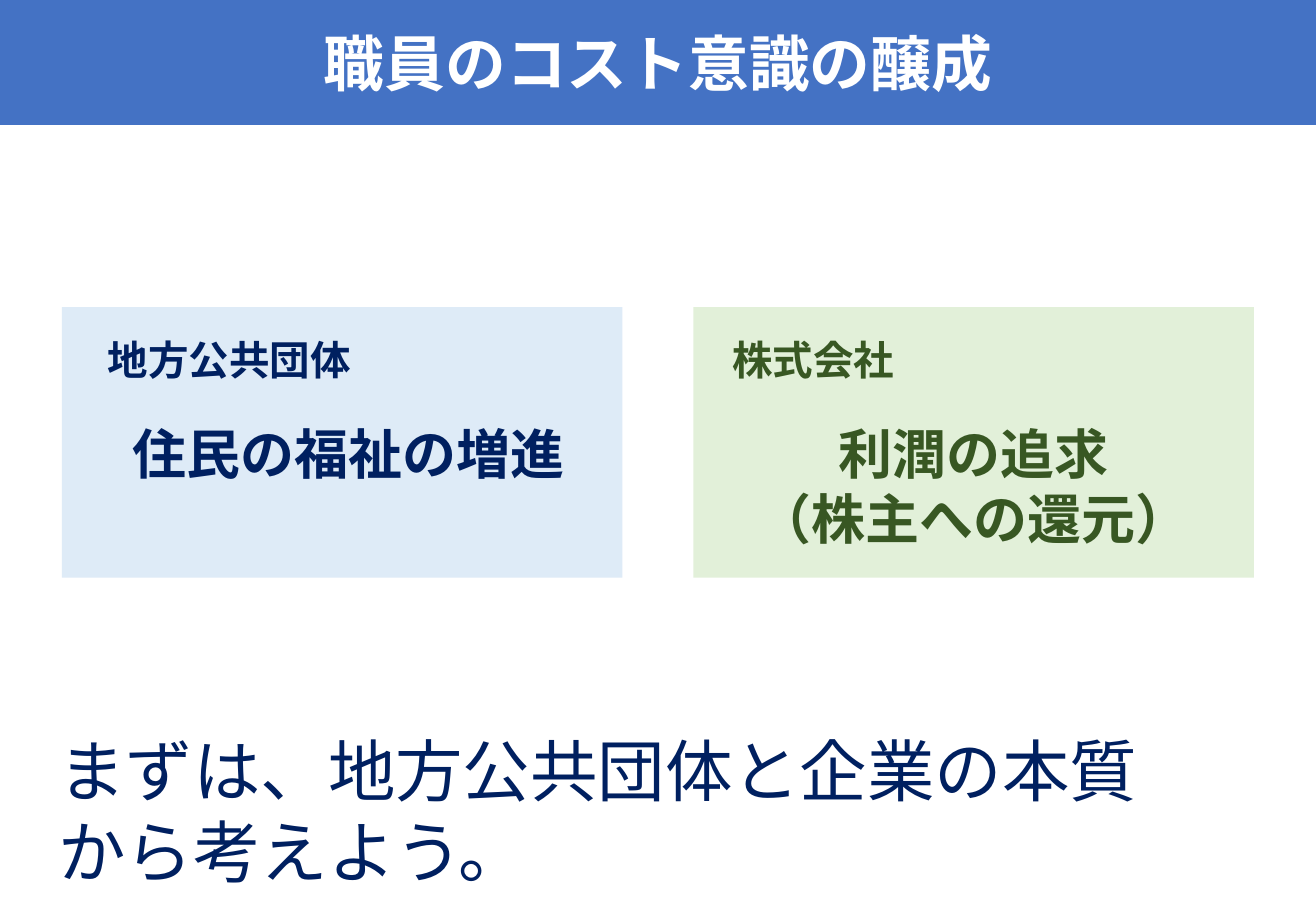
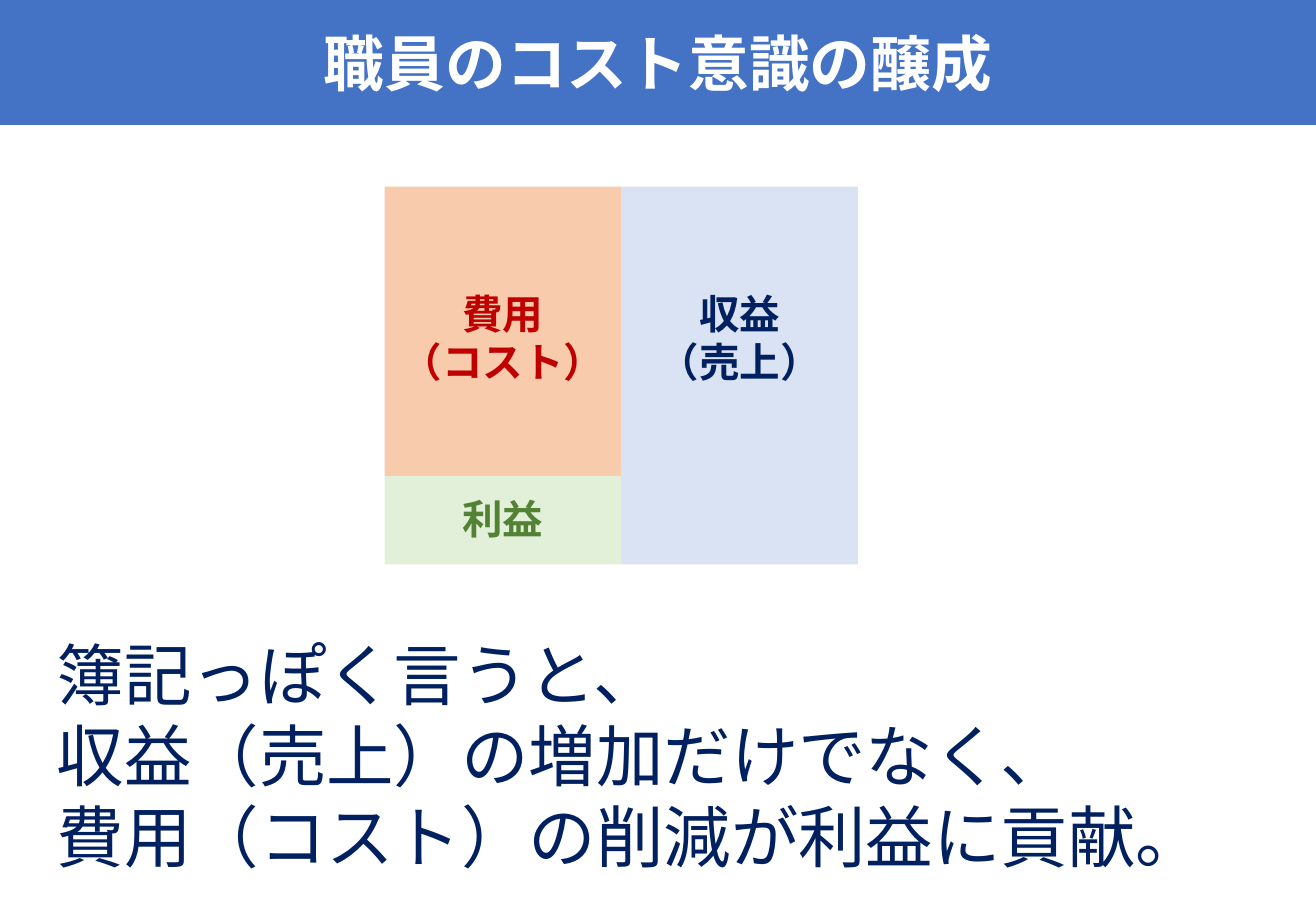
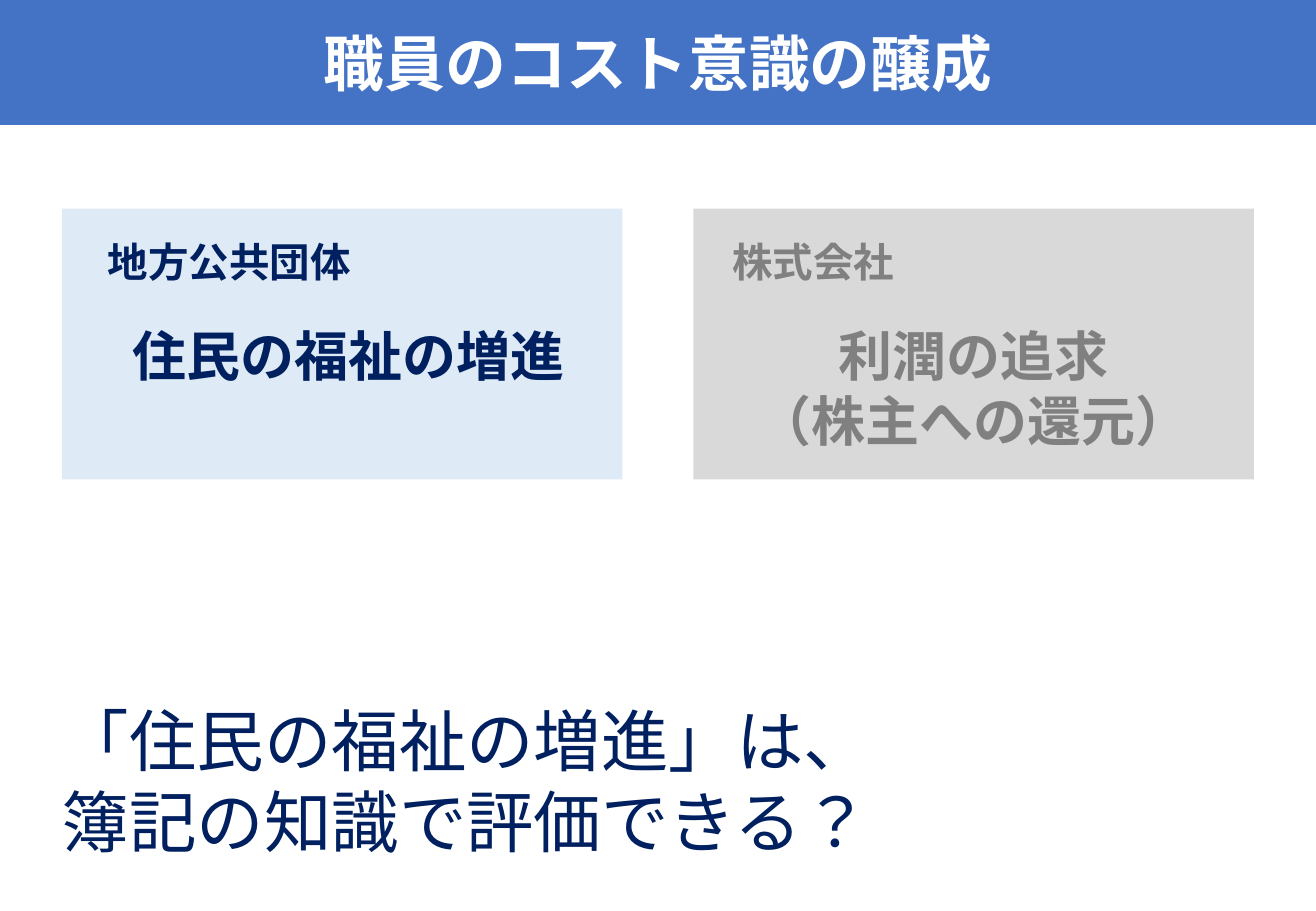
import dataclasses

import lxml.etree
import pptx
import pptx.dml.color
import pptx.enum.lang
import pptx.enum.shapes
import pptx.enum.text
import pptx.oxml.ns
import pptx.util

Pt = pptx.util.Pt
Align = pptx.enum.text.PP_ALIGN
Anchor = pptx.enum.text.MSO_ANCHOR


@dataclasses.dataclass(frozen=True)
class Theme:
    font: str = "Calibri"
    band: str = "4472C4"
    white: str = "FFFFFF"
    navy: str = "002060"
    sky: str = "DEEBF7"
    pale: str = "DAE3F3"
    mint: str = "E2F0D9"
    forest: str = "385723"
    leaf: str = "548235"
    peach: str = "F8CBAD"
    red: str = "C00000"
    silver: str = "D9D9D9"
    gray: str = "808080"
    title: int = 36
    lead: int = 40
    aim: int = 32
    label: int = 24


T = Theme()
WIDE, HIGH = 780, 540


def tint(code):
    return pptx.dml.color.RGBColor.from_string(code)


def write(frame, text, size=T.label, color=T.navy, bold=True, align=Align.LEFT, gap=0, plain=False):
    for row, line in enumerate(text.split("\n")):
        para = frame.paragraphs[0]
        if para.runs:
            para = frame.add_paragraph()
        para.alignment = align
        para.line_spacing = 1.0
        para.space_before = Pt(0 if row else gap)
        if plain:
            props = para._p.get_or_add_pPr()
            props.set("marL", "0")
            props.set("indent", "0")
            lxml.etree.SubElement(props, pptx.oxml.ns.qn("a:buNone"))
        run = para.add_run()
        run.text = line
        run.font.size = Pt(size)
        run.font.bold = bold
        run.font.color.rgb = tint(color)
        run.font.name = T.font
        run.font.language_id = pptx.enum.lang.MSO_LANGUAGE_ID.JAPANESE
        east = lxml.etree.SubElement(run._r.get_or_add_rPr(), pptx.oxml.ns.qn("a:ea"))
        east.set("typeface", T.font)


def block(slide, box, color):
    shape = slide.shapes.add_shape(pptx.enum.shapes.MSO_SHAPE.RECTANGLE, *map(Pt, box))
    shape.shadow.inherit = False
    shape.fill.solid()
    shape.fill.fore_color.rgb = tint(color)
    shape.line.fill.background()


def area(slide, box):
    frame = slide.shapes.add_textbox(*map(Pt, box)).text_frame
    frame.word_wrap = True
    return frame


def settle(shape, box, anchor):
    shape.left, shape.top, shape.width, shape.height = map(Pt, box)
    frame = shape.text_frame
    frame.word_wrap = True
    frame.auto_size = pptx.enum.text.MSO_AUTO_SIZE.NONE
    frame.vertical_anchor = anchor
    return frame


def start(deck, text, box):
    slide = deck.slides.add_slide(deck.slide_layouts[1])
    title = slide.shapes.title
    title.fill.solid()
    title.fill.fore_color.rgb = tint(T.band)
    frame = settle(title, (0, 0, WIDE, 74), Anchor.MIDDLE)
    write(frame, "職員のコスト意識の醸成", size=T.title, color=T.white, align=Align.CENTER)
    frame = settle(slide.placeholders[1], box, Anchor.TOP)
    write(frame, text, size=T.lead, bold=False, plain=True)
    return slide


def card(slide, box, name, aim, fill, ink, inset):
    left, top, wide, high = box
    block(slide, box, fill)
    frame = area(slide, (left + inset, top + 13, 300, high - 26))
    write(frame, name, color=ink)
    write(frame, aim, size=T.aim, color=ink, align=Align.CENTER, gap=22)


def pair(slide, box, fill, ink):
    left, top, wide, high = box
    gap = 42
    each = (wide - gap) / 2
    card(slide, (left, top, each, high), "地方公共団体", "住民の福祉の増進", T.sky, T.navy, 20)
    card(slide, (left + each + gap, top, each, high),
         "株式会社", "利潤の追求\n（株主への還元）", fill, ink, 16)


def ledger(slide, box):
    left, top, wide, high = box
    half = wide / 2
    cost = 171.5
    cells = (
        (0, 0, cost, 57, "費用\n（コスト）", T.peach, T.red),
        (half, 0, high, 57, "収益\n（売上）", T.pale, T.navy),
        (0, cost, high - cost, 7, "利益", T.mint, T.leaf),
    )
    for right, down, tall, drop, text, fill, ink in cells:
        spot = (left + right, top + down, half, tall)
        block(slide, spot, fill)
        frame = area(slide, (spot[0], spot[1] + drop, half, tall - drop))
        write(frame, text, color=ink, align=Align.CENTER)


def main():
    deck = pptx.Presentation()
    deck.slide_width, deck.slide_height = Pt(WIDE), Pt(HIGH)

    slide = start(deck, "まずは、地方公共団体と企業の本質から考えよう。", (27.4, 428.4, 666, 104.5))
    pair(slide, (36.7, 182, 706.5, 160.5), T.mint, T.forest)

    slide = start(deck, "簿記っぽく言うと、\n収益（売上）の増加だけでなく、\n費用（コスト）の削減が利益に貢献。",
                  (26.5, 371.5, 737, 152.5))
    ledger(slide, (228, 110.6, 280.5, 224))

    slide = start(deck, "「住民の福祉の増進」は、\n簿記の知識で評価できる？", (29.5, 411, 737, 104.5))
    pair(slide, (36.7, 123.7, 706.5, 160.5), T.silver, T.gray)

    deck.save("out.pptx")


if __name__ == "__main__":
    main()
